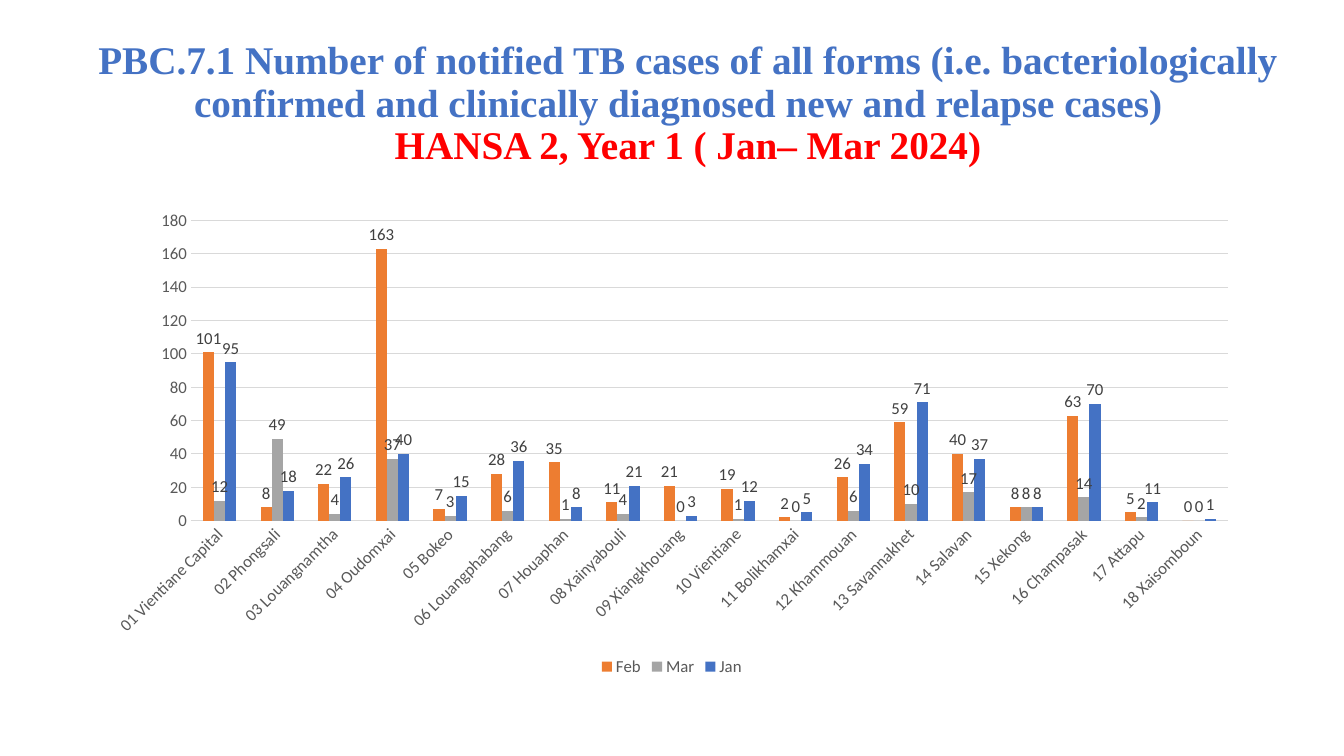
from copy import deepcopy
from pptx import Presentation
from pptx.chart.data import CategoryChartData
from pptx.dml.color import RGBColor
from pptx.enum.chart import XL_CHART_TYPE as CT, XL_LABEL_POSITION as LP
from pptx.enum.chart import XL_LEGEND_POSITION as LEG, XL_TICK_MARK as TM
from pptx.enum.text import MSO_ANCHOR, MSO_AUTO_SIZE, PP_ALIGN
from pptx.util import Cm, Pt

BLUE = RGBColor(0x44, 0x72, 0xC4)
ORANGE = RGBColor(0xED, 0x7D, 0x31)
GRAY = RGBColor(0xA5, 0xA5, 0xA5)
RED = RGBColor(0xFF, 0x00, 0x00)
AXIS_TEXT = RGBColor(0x59, 0x59, 0x59)
LABEL_TEXT = RGBColor(0x40, 0x40, 0x40)
GRID = RGBColor(0xD9, 0xD9, 0xD9)

PROVINCES = [
    "01 Vientiane Capital", "02 Phongsali", "03 Louangnamtha", "04 Oudomxai",
    "05 Bokeo", "06 Louangphabang", "07 Houaphan", "08 Xainyabouli",
    "09 Xiangkhouang", "10 Vientiane", "11 Bolikhamxai", "12 Khammouan",
    "13 Savannakhet", "14 Salavan", "15 Xekong", "16 Champasak",
    "17 Attapu", "18 Xaisomboun",
]
MONTHS = [
    ("Jan", BLUE, [95, 18, 26, 40, 15, 36, 8, 21, 3, 12, 5, 34, 71, 37, 8, 70, 11, 1]),
    ("Feb", ORANGE, [101, 8, 22, 163, 7, 28, 35, 11, 21, 19, 2, 26, 59, 40, 8, 63, 5, 0]),
    ("Mar", GRAY, [12, 49, 4, 37, 3, 6, 1, 4, 0, 1, 0, 6, 10, 17, 8, 14, 2, 0]),
]
TITLE = [
    ("PBC.7.1 Number of notified TB cases of all forms (i.e. bacteriologically "
     "confirmed and clinically diagnosed new and relapse cases)  ", BLUE),
    ("HANSA 2, Year 1 ( Jan– Mar 2024)", RED),
]


def style_font(font, color, size=12, name="Calibri", bold=False):
    font.name = name
    font.size = Pt(size)
    font.bold = bold
    font.color.rgb = color


prs = Presentation()
prs.slide_width, prs.slide_height = Cm(33.87), Cm(19.05)
s = prs.slides.add_slide(prs.slide_layouts[5])

title = s.shapes.title
title.left, title.top, title.width, title.height = Cm(0.81), Cm(1.02), Cm(33.05), Cm(4.42)
tf = title.text_frame
tf.word_wrap = True
tf.auto_size = MSO_AUTO_SIZE.NONE
tf.vertical_anchor = MSO_ANCHOR.MIDDLE
tf.margin_top, tf.margin_bottom = Cm(0), Cm(1.2)
p = tf.paragraphs[0]
p.alignment = PP_ALIGN.CENTER
p.line_spacing = 0.9
for i, (text, color) in enumerate(TITLE):
    if i:
        p.add_line_break()
        p._p[-1].append(deepcopy(r._r.rPr))
    r = p.add_run()
    r.text = text
    style_font(r.font, color, 28, "Times New Roman", True)

data = CategoryChartData()
data.categories = PROVINCES
for name, color, cases in MONTHS:
    data.add_series(name, cases)
chart = s.shapes.add_chart(
    CT.COLUMN_CLUSTERED, Cm(2.33), Cm(5.06), Cm(29.2), Cm(12.09), data).chart
chart.has_title = False
style_font(chart.font, AXIS_TEXT)
chart.has_legend = True
chart.legend.position = LEG.BOTTOM
chart.legend.include_in_layout = False
style_font(chart.legend.font, AXIS_TEXT)

plot = chart.plots[0]
plot.gap_width = 219
plot.overlap = 0
plot.vary_by_categories = False
for series, (name, color, cases) in zip(plot.series, MONTHS):
    series.format.fill.solid()
    series.format.fill.fore_color.rgb = color
    series.invert_if_negative = False
    labels = series.data_labels
    labels.show_value = True
    labels.position = LP.OUTSIDE_END
    style_font(labels.font, LABEL_TEXT)
jan, feb, mar = plot.series
mar._element.addnext(jan._element)

for axis in (chart.category_axis, chart.value_axis):
    axis.major_tick_mark = axis.minor_tick_mark = TM.NONE
    style_font(axis.tick_labels.font, AXIS_TEXT)
chart.category_axis._element.txPr.bodyPr.set("rot", "-2700000")
chart.value_axis.minimum_scale = 0
chart.value_axis.maximum_scale = 180
chart.value_axis.major_unit = 20
chart.value_axis.format.line.fill.background()
for line in (chart.category_axis.format.line, chart.value_axis.major_gridlines.format.line):
    line.color.rgb = GRID
    line.width = Pt(0.75)

prs.save("out.pptx")
